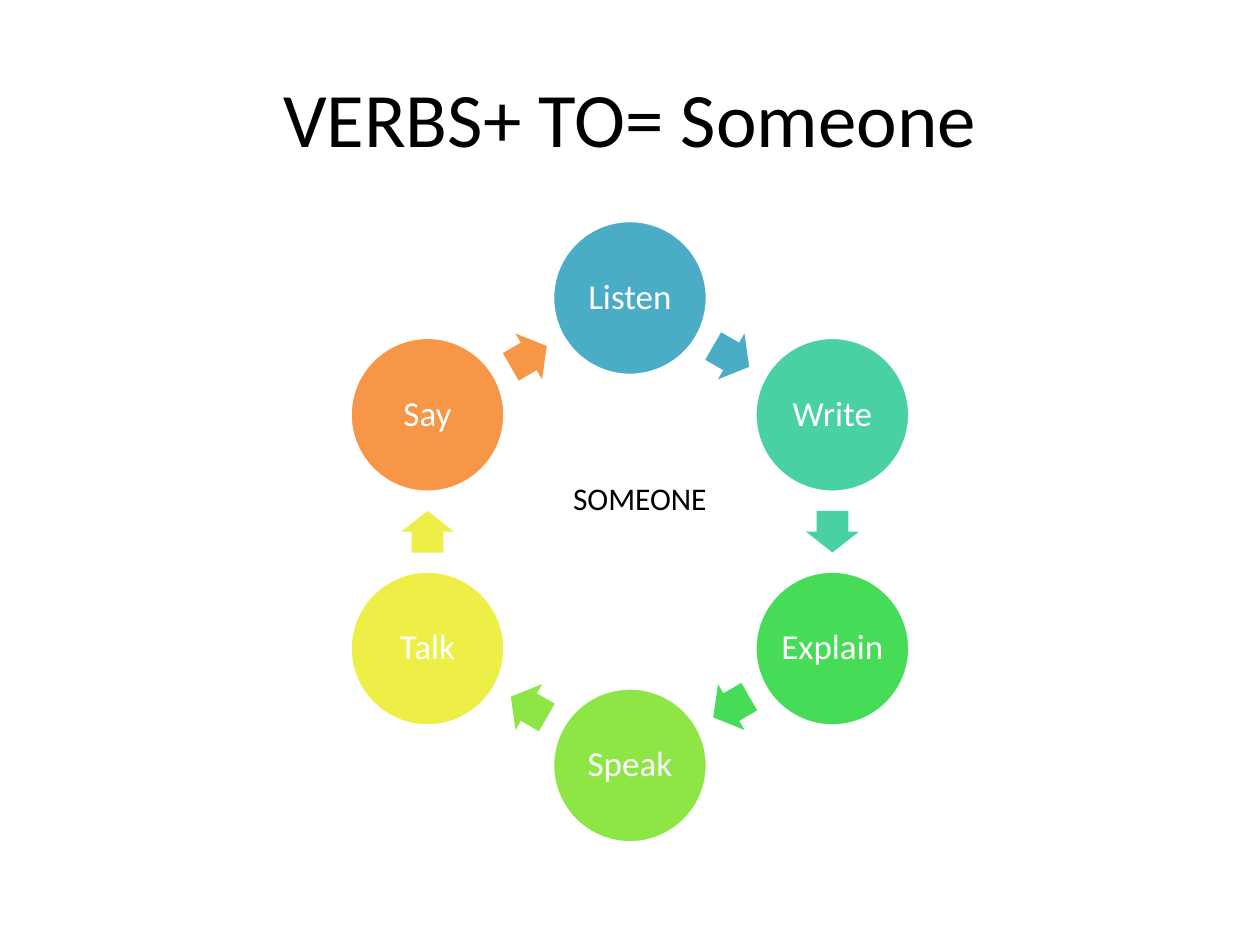
import math

import pptx
import pptx.dml.color
import pptx.enum.shapes
import pptx.enum.text
import pptx.util

COLORS = {
    "black": "000000",
    "white": "FFFFFF",
    "blue": "4BACC6",
    "teal": "49D1A3",
    "green": "47DC57",
    "lime": "8DE646",
    "yellow": "EEEF46",
    "orange": "F79646",
}
VERBS = [
    ("Listen", "blue"),
    ("Write", "teal"),
    ("Explain", "green"),
    ("Speak", "lime"),
    ("Talk", "yellow"),
    ("Say", "orange"),
]

# The grid has 100 columns and 75 rows of square cells
CELL = pptx.util.Inches(0.1)
COLUMNS, ROWS = 100, 75
RING_CENTER = (50, 42.2)
RING_RADIUS = 18.55
CIRCLE_SIZE = 12.3
ARROW_SIZE = (3.3, 4.2)

SHAPES = pptx.enum.shapes.MSO_SHAPE
ALIGN = pptx.enum.text.PP_ALIGN
ANCHOR = pptx.enum.text.MSO_ANCHOR


def rgb(name):
    return pptx.dml.color.RGBColor.from_string(COLORS[name])


def cells(*lengths):
    return [round(length * CELL) for length in lengths]


class SlideBuilder:
    font = "Calibri"

    def __init__(self, deck):
        self.page = deck.slides.add_slide(deck.slide_layouts[5])

    def set_text(self, box, text, size, color, frame_format, para_format):
        frame = box.text_frame
        frame.text = text
        para = frame.paragraphs[0]
        span = para.runs[0]
        span_format = {"name": self.font, "size": pptx.util.Pt(size)}
        for target, values in (
            (frame, {"word_wrap": True, **frame_format}),
            (para, para_format),
            (span.font, span_format),
        ):
            for name, value in values.items():
                setattr(target, name, value)
        span.font.color.rgb = rgb(color)

    def title(self, text, left, top, width, height):
        box = self.page.shapes.title
        box.left, box.top, box.width, box.height = cells(left, top, width, height)
        self.set_text(box, text, 44, "black",
                      {"vertical_anchor": ANCHOR.MIDDLE}, {"alignment": ALIGN.CENTER})

    def label(self, text, left, top, width, height):
        box = self.page.shapes.add_textbox(*cells(left, top, width, height))
        self.set_text(box, text, 18, "black",
                      {"vertical_anchor": ANCHOR.BOTTOM}, {"alignment": ALIGN.LEFT})

    def shape(self, kind, center, width, height, color):
        x, y = center
        shape = self.page.shapes.add_shape(
            kind, *cells(x - width / 2, y - height / 2, width, height))
        shape.shadow.inherit = False
        shape.fill.solid()
        shape.fill.fore_color.rgb = rgb(color)
        shape.line.fill.background()
        return shape

    def circle(self, text, center, color):
        circle = self.shape(SHAPES.OVAL, center, CIRCLE_SIZE, CIRCLE_SIZE, color)
        circle.line.color.rgb = rgb("white")
        circle.line.width = pptx.util.Pt(2)
        margins = {f"margin_{side}": 0 for side in ("left", "top", "right", "bottom")}
        self.set_text(circle, text, 20, "white",
                      {"vertical_anchor": ANCHOR.MIDDLE, **margins},
                      {"alignment": ALIGN.CENTER, "line_spacing": 0.9})

    def arrow(self, center, angle, color):
        arrow = self.shape(SHAPES.RIGHT_ARROW, center, *ARROW_SIZE, color)
        arrow.rotation = angle
        arrow.adjustments[0] = 0.6
        arrow.adjustments[1] = 0.5


def ring_point(angle, radius):
    """Point on the ring, with the angle clockwise from the top."""
    turn = math.radians(angle)
    x, y = RING_CENTER
    return x + radius * math.sin(turn), y - radius * math.cos(turn)


def main():
    deck = pptx.Presentation()
    deck.slide_width, deck.slide_height = cells(COLUMNS, ROWS)
    slide = SlideBuilder(deck)

    slide.title("VERBS+ TO= Someone", 5, 3, 90, 12.5)

    # Ring of verbs, each with an arrow halfway to the next one
    step = 360 / len(VERBS)
    arrow_radius = RING_RADIUS * math.cos(math.radians(step / 2))
    for index, (verb, color) in enumerate(VERBS):
        angle = index * step
        slide.circle(verb, ring_point(angle, RING_RADIUS), color)
        halfway = angle + step / 2
        slide.arrow(ring_point(halfway, arrow_radius), halfway, color)

    # Centre of the ring
    slide.label("SOMEONE", 44.5, 34.4, 15.7, 7.1)

    deck.save("out.pptx")


if __name__ == "__main__":
    main()
